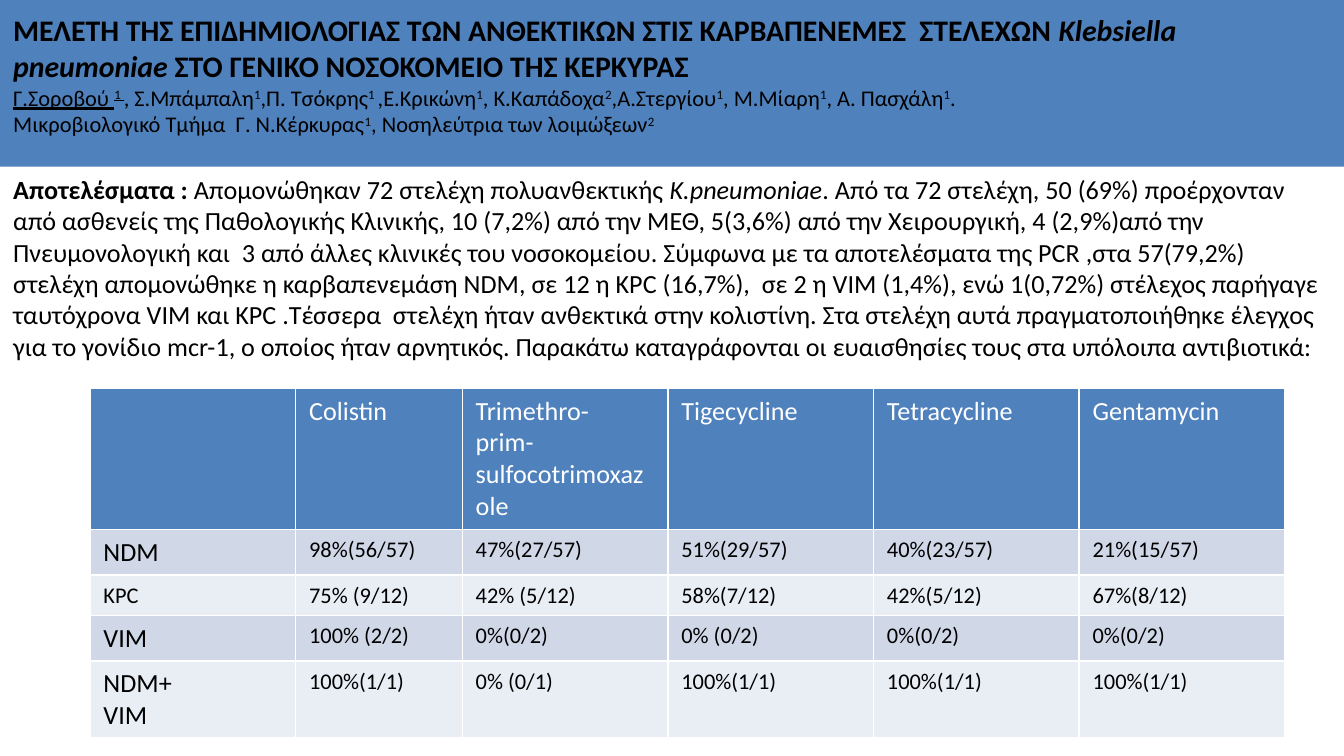
"""Build a slide on carbapenem-resistant Klebsiella pneumoniae strains."""
from dataclasses import dataclass

from lxml.etree import SubElement
from pptx import Presentation
from pptx.dml.color import RGBColor
from pptx.enum.text import MSO_ANCHOR
from pptx.oxml.ns import qn
from pptx.slide import Slide
from pptx.table import _Cell
from pptx.text.text import TextFrame, _Paragraph
from pptx.util import Inches, Pt

COLOURS = {"blue": "4F81BD", "band": "D0D8E8", "pale": "E9EDF4", "black": "000000", "white": "FFFFFF"}
TITLE = {"size": Pt(16), "bold": True}
AUTHOR = {"size": Pt(12)}
BODY = {"size": Pt(14)}


@dataclass
class Span:
    text: str
    style: dict
    raised: bool = False
    colour: str = "black"


@dataclass
class Panel:
    top: float
    height: float
    margin_top: float
    spans: list[Span]
    fill: str = ""


@dataclass
class Grid:
    left: float
    top: float
    columns: list[float]
    heights: list[float]
    header: list[str]
    rows: list[list[str]]
    label_sizes: list[int]


def credits(*pairs: tuple[str, str]) -> list[Span]:
    """Return plain names, each followed by its raised affiliation number."""
    return [Span(text, AUTHOR, raised) for pair in pairs for text, raised in zip(pair, (False, True))]


def write_span(para: _Paragraph, item: Span) -> None:
    """Add one formatted run or line break to a paragraph."""
    if item.text == "\n":
        para.add_line_break()
        SubElement(para._p[-1], qn("a:rPr"), sz=str(item.style["size"].centipoints))
        return
    span = para.add_run()
    span.text = item.text
    for name, value in ({"name": "Calibri"} | item.style).items():
        setattr(span.font, name, value)
    span.font.color.rgb = RGBColor.from_string(COLOURS[item.colour])
    if item.raised:
        span._r.get_or_add_rPr().set("baseline", "30000")


def write_text(frame: TextFrame, paragraphs: list[list[Span]]) -> None:
    """Fill a text frame with paragraphs of spans."""
    for index, items in enumerate(paragraphs):
        para = frame.add_paragraph() if index else frame.paragraphs[0]
        for item in items:
            write_span(para, item)


def draw_panel(page: Slide, panel: Panel) -> None:
    """Draw a full-width text panel."""
    box = page.shapes.add_textbox(0, Inches(panel.top), Inches(10), Inches(panel.height))
    if panel.fill:
        box.fill.solid()
        box.fill.fore_color.rgb = RGBColor.from_string(COLOURS[panel.fill])
    layout = {"word_wrap": True, "vertical_anchor": MSO_ANCHOR.TOP, "margin_top": Inches(panel.margin_top)}
    for name, value in layout.items():
        setattr(box.text_frame, name, value)
    write_text(box.text_frame, [panel.spans])


def style_cell(cell: _Cell, fill: str) -> None:
    """Give a cell white borders and a solid fill."""
    properties = cell._tc.get_or_add_tcPr()
    for side in "LRTB":
        line = SubElement(properties, qn(f"a:ln{side}"), w=str(Pt(1)))
        solid = SubElement(line, qn("a:solidFill"))
        SubElement(solid, qn("a:srgbClr"), val=COLOURS["white"])
    cell.fill.solid()
    cell.fill.fore_color.rgb = RGBColor.from_string(COLOURS[fill])


def draw_grid(page: Slide, grid: Grid) -> None:
    """Draw the table of susceptibilities."""
    table = page.shapes.add_table(
        len(grid.heights), len(grid.columns), Inches(grid.left), Inches(grid.top),
        Inches(sum(grid.columns)), Inches(sum(grid.heights)),
    ).table
    for column, width in zip(table.columns, grid.columns):
        column.width = Inches(width)
    for row, height in zip(table.rows, grid.heights):
        row.height = Inches(height)
    for row_index, texts in enumerate([grid.header, *grid.rows]):
        is_header = row_index == 0
        fill = "blue" if is_header else ("pale", "band")[row_index % 2]
        colour = "white" if is_header else "black"
        for column_index, text in enumerate(texts):
            cell = table.cell(row_index, column_index)
            style_cell(cell, fill)
            size = 14 if is_header else 12
            if column_index == 0:
                size = grid.label_sizes[row_index]
            lines = text.split("\n") if text else []
            write_text(cell.text_frame, [[Span(line, {"size": Pt(size)}, colour=colour)] for line in lines])


HEADING = Panel(0, 1.24, 0.09, [
    Span("ΜΕΛΕΤΗ ΤΗΣ ΕΠΙΔΗΜΙΟΛΟΓΙΑΣ ΤΩΝ ΑΝΘΕΚΤΙΚΩΝ ΣΤΙΣ ΚΑΡΒΑΠΕΝΕΜΕΣ  ΣΤΕΛΕΧΩΝ ", TITLE),
    Span("Klebsiella pneumoniae ", TITLE | {"italic": True}),
    Span("ΣΤΟ ΓΕΝΙΚΟ ΝΟΣΟΚΟΜΕΙΟ ΤΗΣ ΚΕΡΚΥΡΑΣ", TITLE),
    Span("\n", TITLE),
    Span("Γ.Σοροβού ", AUTHOR | {"underline": True}),
    Span("1 ", AUTHOR | {"underline": True}, True),
    *credits((", Σ.Μπάμπαλη", "1"), (",Π. Τσόκρης", "1 "), (",Ε.Κρικώνη", "1"), (", Κ.Καπάδοχα", "2"),
             (",Α.Στεργίου", "1"), (", Μ.Μίαρη", "1"), (", Α. Πασχάλη", "1")),
    Span(".", AUTHOR),
    Span("\n", AUTHOR),
    *credits(("Μικροβιολογικό Τμήμα  Γ. Ν.Κέρκυρας", "1"), (", Νοσηλεύτρια των λοιμώξεων", "2")),
], "blue")

RESULTS = Panel(1.24, 4.38, 0.05, [
    Span("Αποτελέσματα :", BODY | {"bold": True}),
    Span(" Απομονώθηκαν 72 στελέχη πολυανθεκτικής ", BODY),
    Span("Κ.pneumoniae", BODY | {"italic": True}),
    Span(
        ". Aπό τα 72 στελέχη, 50 (69%) προέρχονταν από ασθενείς της Παθολογικής Κλινικής, 10 (7,2%) από την ΜΕΘ, "
        "5(3,6%) από την Χειρουργική, 4 (2,9%)από την Πνευμονολογική και  3 από άλλες κλινικές του νοσοκομείου. "
        "Σύμφωνα με τα αποτελέσματα της PCR ,στα 57(79,2%) στελέχη απομονώθηκε η καρβαπενεμάση NDM, "
        "σε 12 η KPC (16,7%),  σε 2 η VIM (1,4%), ενώ 1(0,72%) στέλεχος παρήγαγε ταυτόχρονα VIM και KPC "
        ".Τέσσερα  στελέχη ήταν ανθεκτικά στην κολιστίνη. Στα στελέχη αυτά πραγματοποιήθηκε έλεγχος "
        "για το γονίδιο mcr-1, ο οποίος ήταν αρνητικός. Παρακάτω καταγράφονται οι ευαισθησίες τους "
        "στα υπόλοιπα αντιβιοτικά:", BODY),
])

SUSCEPTIBILITY = Grid(
    0.67, 2.89, [1.53, 1.24] + [1.53] * 4, [1.05, 0.34, 0.3, 0.34, 0.57],
    ["", "Colistin", "Trimethro-\nprim-sulfocotrimoxazole", "Tigecycline", "Tetracycline", "Gentamycin"],
    [
        ["NDM", "98%(56/57)", "47%(27/57)", "51%(29/57)", "40%(23/57)", "21%(15/57)"],
        ["KPC", "75% (9/12)", "42% (5/12)", "58%(7/12)", "42%(5/12)", "67%(8/12)"],
        ["VIM", "100% (2/2)", "0%(0/2)", "0% (0/2)", "0%(0/2)", "0%(0/2)"],
        ["NDM+\nVIM", "100%(1/1)", "0% (0/1)", "100%(1/1)", "100%(1/1)", "100%(1/1)"],
    ],
    [14, 14, 12, 14, 14],
)


def main() -> None:
    """Build and save the deck."""
    deck = Presentation()
    deck.slide_width, deck.slide_height = Inches(10), Inches(10 * 9 / 16)
    page = deck.slides.add_slide(deck.slide_layouts[6])
    for panel in (HEADING, RESULTS):
        draw_panel(page, panel)
    draw_grid(page, SUSCEPTIBILITY)
    deck.save("out.pptx")


if __name__ == "__main__":
    main()
